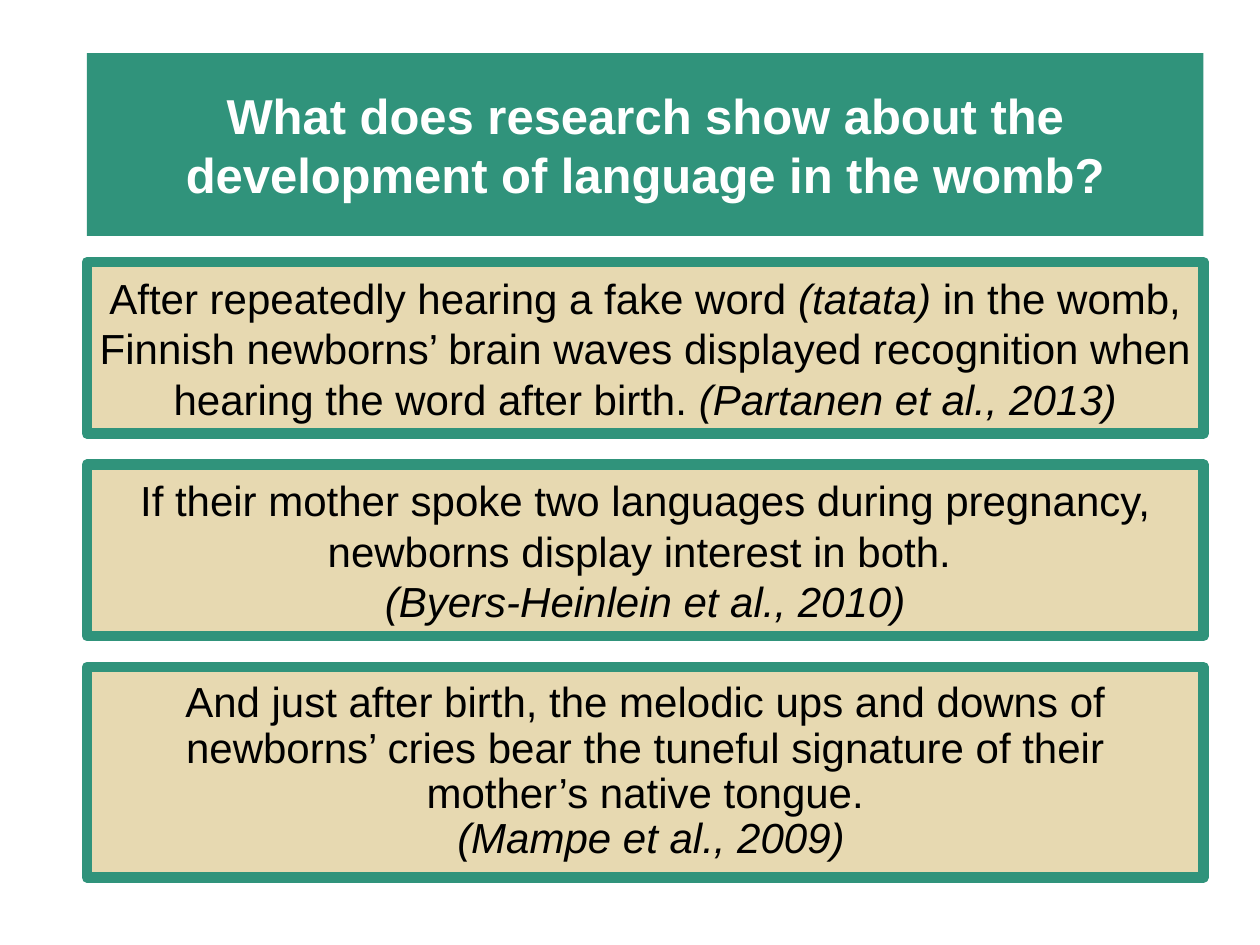
from lxml import etree
from pptx import Presentation
from pptx.dml.color import RGBColor
from pptx.enum import shapes, text
from pptx.oxml import ns
from pptx.util import Pt

COLORS = {"green": "30937B", "sand": "E7D9B1", "white": "FFFFFF", "black": "000000"}
LEFT, WIDTH = 49.7, 638

prs = Presentation()
prs.slide_width, prs.slide_height = Pt(720), Pt(540)
s = prs.slides.add_slide(prs.slide_layouts[6])


def rgb(name):
    return RGBColor.from_string(COLORS[name])


def add_box(top, height, fill, paragraphs, size, color, bold=False, spacing=1.0):
    """Add a full-width box; paragraphs are lists of (text, italic) runs."""
    sp = s.shapes.add_shape(shapes.MSO_SHAPE.RECTANGLE, Pt(LEFT), Pt(top), Pt(WIDTH), Pt(height))
    sp.shadow.inherit = False
    sp.fill.solid()
    sp.fill.fore_color.rgb = rgb(fill)
    tf = sp.text_frame
    tf.word_wrap = True
    tf.vertical_anchor = text.MSO_ANCHOR.MIDDLE
    for i, runs in enumerate(paragraphs):
        p = tf.paragraphs[0] if i == 0 else tf.add_paragraph()
        p.alignment = text.PP_ALIGN.CENTER
        p.line_spacing = spacing
        for words, italic in runs:
            r = p.add_run()
            r.text = words
            font = {"name": "Arial", "size": Pt(size), "bold": bold, "italic": italic}
            for key, value in font.items():
                setattr(r.font, key, value)
            r.font.color.rgb = rgb(color)
    return sp


title = "What does research show about the development of language in the womb?"
add_box(30.3, 104.5, "green", [[(title, False)]], 28, "white", bold=True).line.fill.background()

findings = [
    (149.8, 98, 1.0, [[
        ("After repeatedly hearing a fake word ", False),
        ("(tatata) ", True),
        ("in the womb, Finnish newborns’ brain waves displayed recognition when "
         "hearing the word after birth. ", False),
        ("(Partanen et al., 2013)", True)]]),
    (265.5, 98, 1.0, [
        [("If their mother spoke two languages during pregnancy, "
          "newborns display interest in both. ", False)],
        [("(Byers-Heinlein et al., 2010)", True)]]),
    (381.2, 120.3, 0.9, [
        [("And just after birth, the melodic ups and downs of newborns’ cries bear "
          "the tuneful signature of their mother’s native tongue.", False)],
        [(" (Mampe et al., 2009)", True)]]),
]
for top, height, spacing, paragraphs in findings:
    sp = add_box(top, height, "sand", paragraphs, 24, "black", spacing=spacing)
    sp.line.color.rgb = rgb("green")
    sp.line.width = Pt(6)
    etree.SubElement(sp.line._get_or_add_ln(), ns.qn("a:round"))

prs.save("out.pptx")
